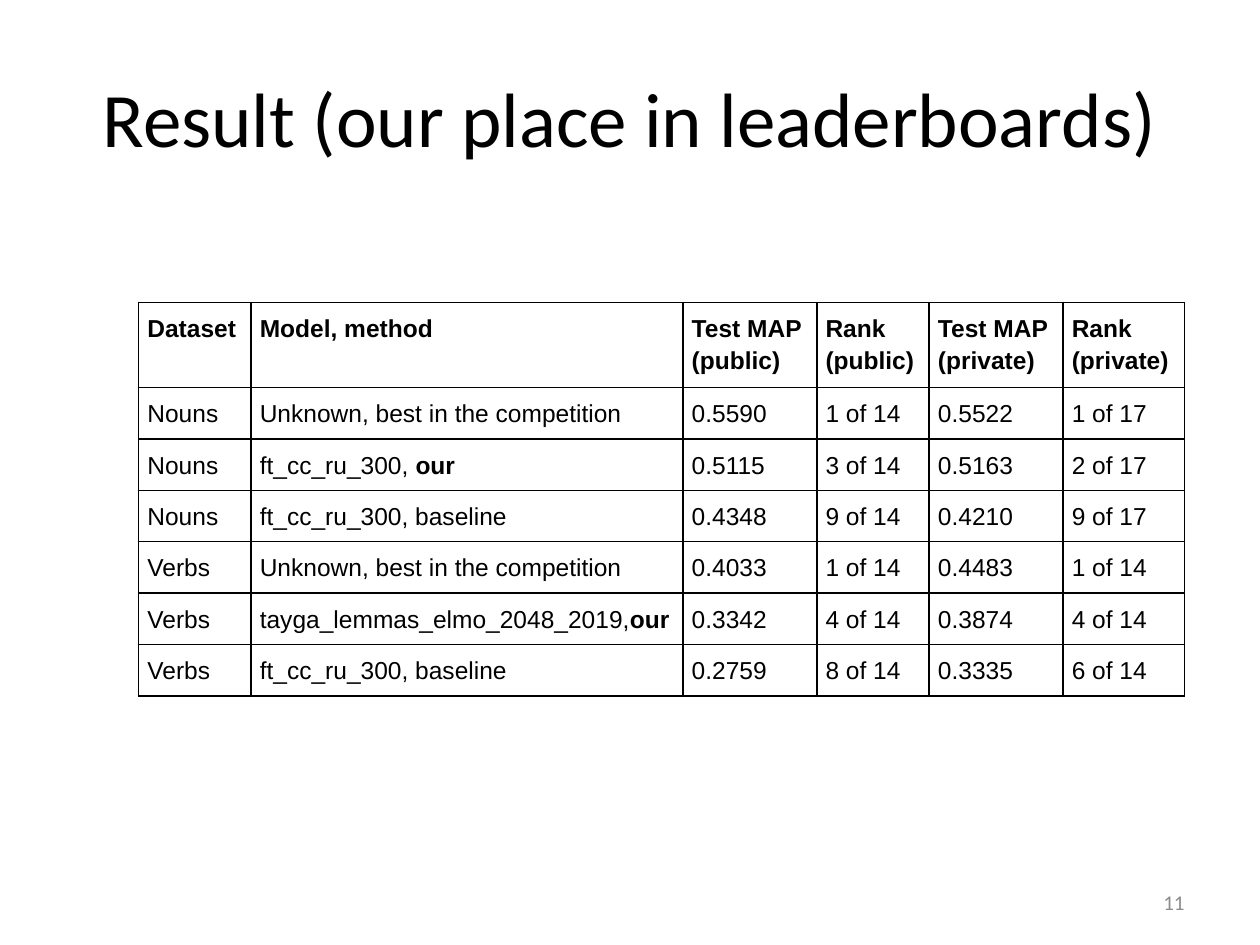
from pptx import Presentation
from pptx.dml.color import RGBColor
from pptx.enum.text import MSO_ANCHOR, PP_ALIGN
from pptx.oxml import parse_xml
from pptx.oxml.ns import nsdecls
from pptx.util import Inches, Pt

MIDDLE = MSO_ANCHOR.MIDDLE
LEFT, CENTER, RIGHT = PP_ALIGN.LEFT, PP_ALIGN.CENTER, PP_ALIGN.RIGHT
COLORS = {"ink": "000000", "muted": "8C8C8C"}
WIDE, HIGH = Inches(10), Inches(7.5)

# Table columns and rows, in inches
COLS = [0.89, 3.42, 1.06, 0.89, 1.06, 0.96]
HEAD_ROW, BODY_ROW = 0.64, 0.39
PAD = Inches(0.07)

# A line break starts a new paragraph; a tuple holds a plain and a bold run
HEAD = ["Dataset", "Model, method", "Test MAP\n(public)", "Rank\n(public)",
        "Test MAP\n(private)", "Rank\n(private)"]
BODY = [
    ["Nouns", "Unknown, best in the competition", "0.5590", "1 of 14", "0.5522", "1 of 17"],
    ["Nouns", ("ft_cc_ru_300, ", "our"), "0.5115", "3 of 14", "0.5163", "2 of 17"],
    ["Nouns", "ft_cc_ru_300, baseline", "0.4348", "9 of 14", "0.4210", "9 of 17"],
    ["Verbs", "Unknown, best in the competition", "0.4033", "1 of 14", "0.4483", "1 of 14"],
    ["Verbs", ("tayga_lemmas_elmo_2048_2019,", "our"), "0.3342", "4 of 14", "0.3874", "4 of 14"],
    ["Verbs", "ft_cc_ru_300, baseline", "0.2759", "8 of 14", "0.3335", "6 of 14"],
]


def place(box):
    """Turn shares of the slide into lengths."""
    x, y, w, h = box
    return int(x * WIDE), int(y * HIGH), int(w * WIDE), int(h * HIGH)


def add_run(para, text, size, face, color, bold=False):
    run = para.add_run()
    run.text = text
    font = run.font
    font.size, font.name, font.bold = Pt(size), face, bold
    font.color.rgb = RGBColor.from_string(COLORS[color])


def add_label(slide, box, text, size, color, align):
    frame = slide.shapes.add_textbox(*place(box)).text_frame
    frame.word_wrap = True
    frame.vertical_anchor = MIDDLE
    para = frame.paragraphs[0]
    para.alignment = align
    add_run(para, text, size, "Calibri", color)


def add_borders(cell):
    props = cell._tc.get_or_add_tcPr()
    for at, side in enumerate(("lnL", "lnR", "lnT", "lnB")):
        props.insert(at, parse_xml(
            f'<a:{side} {nsdecls("a")} w="{Pt(1)}"><a:solidFill>'
            f'<a:srgbClr val="{COLORS["ink"]}"/></a:solidFill></a:{side}>'))


def fill_cell(cell, value, head):
    cell.fill.background()
    cell.margin_left = cell.margin_right = PAD
    cell.margin_top = cell.margin_bottom = PAD
    frame = cell.text_frame
    lines = [value] if isinstance(value, tuple) else [(s,) for s in value.split("\n")]
    for i, line in enumerate(lines):
        para = frame.add_paragraph() if i else frame.paragraphs[0]
        para.alignment = LEFT
        para.line_spacing = 1.15
        for j, text in enumerate(line):
            add_run(para, text, 14, "Arial", "ink", head or j > 0)
    add_borders(cell)


def add_ranks(slide, box):
    rows = [HEAD] + BODY
    x, y, w, h = place(box)
    table = slide.shapes.add_table(len(rows), len(COLS), x, y, w, h).table
    table.first_row = table.horz_banding = False
    for col, share in zip(table.columns, COLS):
        col.width = int(w * share / sum(COLS))
    total = HEAD_ROW + BODY_ROW * len(BODY)
    for r, row in enumerate(rows):
        table.rows[r].height = int(h * (BODY_ROW if r else HEAD_ROW) / total)
        for c, value in enumerate(row):
            fill_cell(table.cell(r, c), value, r == 0)


def main():
    deck = Presentation()
    deck.slide_width, deck.slide_height = WIDE, HIGH
    slide = deck.slides.add_slide(deck.slide_layouts[6])
    # Title
    add_label(slide, (0.05, 0.04, 0.9, 1 / 6), "Result (our place in leaderboards)",
              44, "ink", CENTER)
    # Leaderboard
    add_ranks(slide, (0.11, 0.32, 0.83, 0.4))
    # Page number
    add_label(slide, (0.72, 0.93, 0.23, 0.05), "11", 12, "muted", RIGHT)
    deck.save("out.pptx")


if __name__ == "__main__":
    main()
